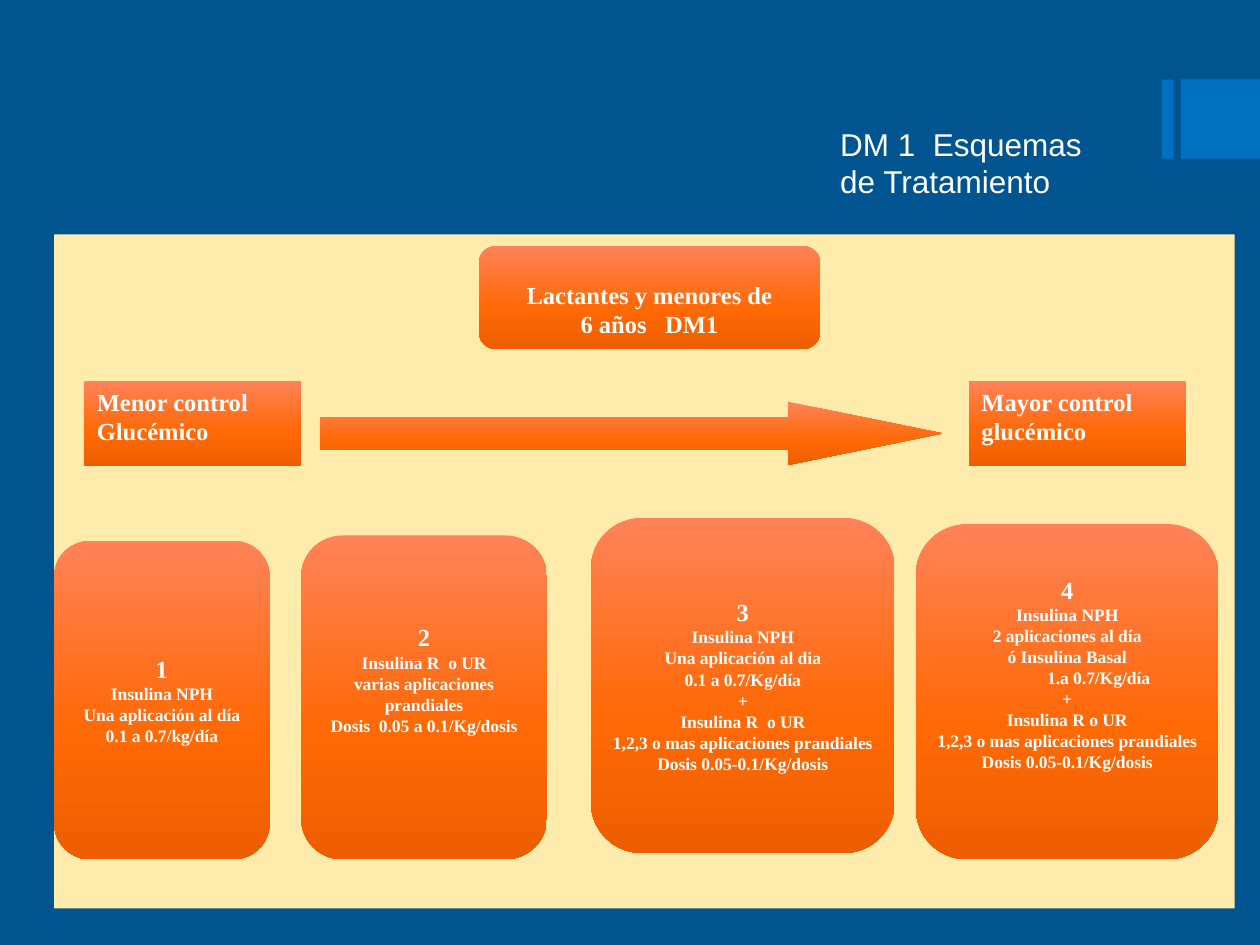
from copy import deepcopy

from pptx import Presentation
from pptx.dml.color import RGBColor
from pptx.enum.shapes import MSO_SHAPE
from pptx.enum.text import MSO_ANCHOR, PP_ALIGN
from pptx.oxml.ns import qn
from pptx.util import Inches, Pt
from lxml.etree import SubElement

NAVY = RGBColor(0x00, 0x54, 0x90)
BLUE = RGBColor(0x00, 0x70, 0xC0)
CREAM = RGBColor(0xFF, 0xEB, 0xAB)
WHITE = RGBColor(0xFF, 0xFF, 0xFF)
STOPS = [
    (0, RGBColor(0xFF, 0x82, 0x58)),
    (0.6, RGBColor(0xFF, 0x69, 0x06)),
    (1, RGBColor(0xED, 0x5E, 0x00)),
]

SMALL, LARGE = 10, 14
LIFT = 0.29
CARDS = [
    ((0.43, 4.29, 1.71, 2.53), 0,
     ["1", "Insulina NPH", "Una aplicación al día", "0.1 a 0.7/kg/día"]),
    ((2.39, 4.25, 1.95, 2.57), LIFT,
     ["2", "Insulina R  o UR", "varias aplicaciones prandiales",
      "Dosis  0.05 a 0.1/Kg/dosis"]),
    ((4.69, 4.11, 2.41, 2.66), 0,
     ["3", "Insulina NPH", "Una aplicación al dia", "0.1 a 0.7/Kg/día", "+",
      "Insulina R  o UR", "1,2,3 o mas aplicaciones prandiales",
      "Dosis 0.05-0.1/Kg/dosis"]),
    ((7.27, 4.16, 2.4, 2.66), LIFT,
     ["4", "Insulina NPH", "2 aplicaciones al día", "ó Insulina Basal",
      "a 0.7/Kg/día", "+", "Insulina R o UR",
      "1,2,3 o mas aplicaciones prandiales", "Dosis 0.05-0.1/Kg/dosis"]),
]


def write(frame, lines, size=LARGE, first=None, font="Times New Roman",
          bold=True, align=PP_ALIGN.LEFT, anchor=MSO_ANCHOR.TOP, pad=None):
    """Fill a frame; first is the size of line one, pad is (side, top, bottom)."""
    frame.word_wrap = True
    frame.vertical_anchor = anchor
    if pad:
        side, top, low = map(Inches, pad)
        frame.margin_left = frame.margin_right = side
        frame.margin_top, frame.margin_bottom = top, low
    for i, line in enumerate(lines):
        para = frame.paragraphs[0] if i == 0 else frame.add_paragraph()
        para.alignment = align
        run = para.add_run()
        run.text = line
        run.font.name = font
        run.font.size = Pt(first if first and i == 0 else size)
        run.font.bold = bold
        run.font.color.rgb = WHITE


def number(para):
    """Give a paragraph an indented automatic number."""
    props = para._p.get_or_add_pPr()
    props.set("marL", str(Inches(0.5)))
    props.set("indent", "0")
    SubElement(props, qn("a:buFont")).set("typeface", "+mj-lt")
    SubElement(props, qn("a:buAutoNum")).set("type", "arabicPeriod")


class Board:
    """Holds the current slide and its orange style."""

    def __init__(self, slide):
        self.slide = slide
        slide.background.fill.solid()
        slide.background.fill.fore_color.rgb = NAVY

    def shape(self, kind, box, adj=()):
        item = self.slide.shapes.add_shape(kind, *map(Inches, box))
        item.shadow.inherit = False
        item.line.fill.background()
        for i, value in enumerate(adj):
            item.adjustments[i] = value
        return item

    def plain(self, box, color):
        item = self.shape(MSO_SHAPE.RECTANGLE, box)
        item.fill.solid()
        item.fill.fore_color.rgb = color

    def orange(self, kind, box, adj=()):
        item = self.shape(kind, box, adj)
        item.fill.gradient()
        item.fill.gradient_angle = 270
        stops = item._element.spPr.find(".//" + qn("a:gsLst"))
        stops.append(deepcopy(stops[0]))
        for stop, (place, color) in zip(item.fill.gradient_stops, STOPS):
            stop.position = place
            stop.color.rgb = color
        return item

    def card(self, box, lines, adj=0.167, top=0, low=0, **style):
        item = self.orange(MSO_SHAPE.ROUNDED_RECTANGLE, box, [adj])
        write(item.text_frame, lines, align=PP_ALIGN.CENTER,
              anchor=MSO_ANCHOR.MIDDLE, pad=(0, top, low), **style)
        return item

    def label(self, box, lines):
        item = self.orange(MSO_SHAPE.RECTANGLE, box)
        write(item.text_frame, lines)

    def title(self, box, text):
        item = self.slide.shapes.add_textbox(*map(Inches, box))
        write(item.text_frame, [text], size=18, font="Arial", bold=False)


def main():
    deck = Presentation()
    deck.slide_width, deck.slide_height = Inches(10), Inches(7.5)
    board = Board(deck.slides.add_slide(deck.slide_layouts[6]))

    for left, width in ((9.22, 0.09), (9.37, 0.63)):
        board.plain((left, 0.63, width, 0.63), BLUE)
    board.title((6.57, 0.94, 2.46, 0.33), "DM 1  Esquemas de Tratamiento")
    board.plain((0.43, 1.86, 9.37, 5.35), CREAM)
    board.card((3.8, 1.95, 2.71, 0.82),
               ["Lactantes y menores de", "6 años   DM1"], top=0.19)

    for box, low, lines in CARDS:
        card = board.card(box, lines, low=low, size=SMALL, first=LARGE)
    number(card.text_frame.paragraphs[4])

    board.orange(MSO_SHAPE.RIGHT_ARROW, (2.54, 3.19, 4.94, 0.5), (0.5, 2.449))
    for left, lines in ((0.67, ["Menor control", "Glucémico"]),
                        (7.69, ["Mayor control", "glucémico"])):
        board.label((left, 3.02, 1.72, 0.68), lines)

    deck.save("out.pptx")


if __name__ == "__main__":
    main()
